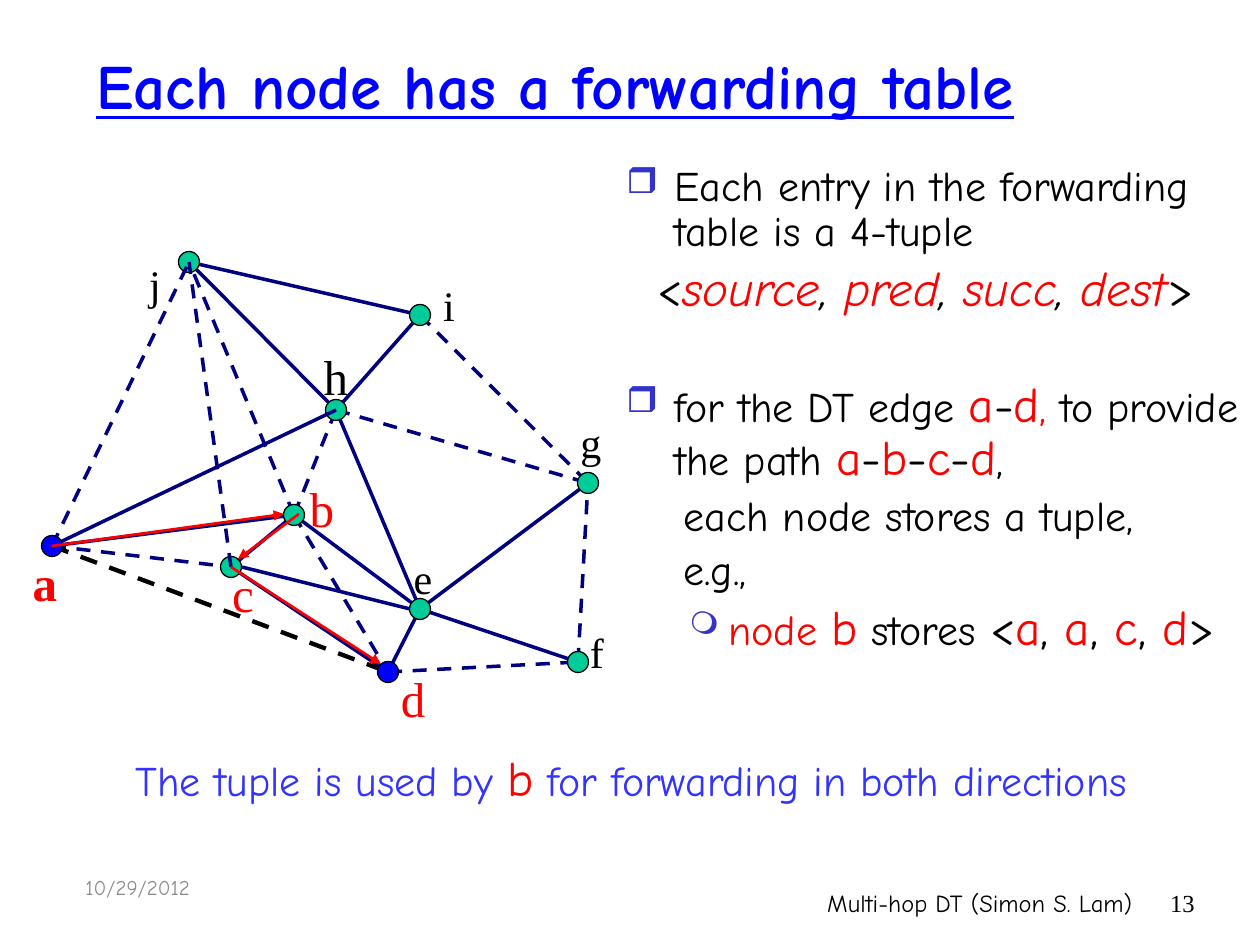
from lxml import etree
from pptx import Presentation
from pptx.dml.color import RGBColor
from pptx.enum.dml import MSO_LINE
from pptx.enum.shapes import MSO_CONNECTOR, MSO_SHAPE
from pptx.enum.text import MSO_ANCHOR, PP_ALIGN
from pptx.oxml.ns import qn
from pptx.util import Emu, Pt

LEFT, CENTER, RIGHT = PP_ALIGN.LEFT, PP_ALIGN.CENTER, PP_ALIGN.RIGHT
TOP, MIDDLE = MSO_ANCHOR.TOP, MSO_ANCHOR.MIDDLE
DASH = MSO_LINE.DASH
STRAIGHT, OVAL = MSO_CONNECTOR.STRAIGHT, MSO_SHAPE.OVAL
PX_PER_INCH = 126
SANS, SERIF = "Comic Neue", "Times New Roman"
BLACK, RED, BLUE, NAVY, GREEN = "000000", "FF0000", "0000FF", "000080", "00CC99"
BULLET, CAPTION, GREY = "3333CC", "3333FF", "8C8C8C"

PLAIN = dict(size=Pt(24), name=SANS, color=BLACK)
LARGE = PLAIN | dict(size=Pt(28))
LARGE_RED = LARGE | dict(color=RED)

NODES = {
    "j": (189, 262), "i": (420, 315), "h": (336, 410), "g": (588, 483),
    "b": (294, 515), "a": (52, 546), "c": (231, 567), "e": (420, 609),
    "d": (388, 672), "f": (578, 662),
}
NODE_SIZE = 21
SOLID_EDGES = "hj ab cd cb be ed he ef eg hi ji".split()
DASHED_EDGES = "bj bh ac bd df fg hg ig".split()
# Label centre x, box top, size, colour
LABELS = {
    "h": (336, 340, 28, BLACK), "c": (243, 557, 28, RED), "a": (45, 546, 28, RED),
    "i": (449, 273, 24, BLACK), "b": (322, 472, 28, RED), "j": (155, 252, 24, BLACK),
    "d": (413, 662, 28, RED), "e": (423, 546, 24, BLACK), "f": (597, 620, 24, BLACK),
    "g": (591, 410, 24, BLACK),
}


def px(length):
    return Emu(round(length * 914400 / PX_PER_INCH))


def rgb(value):
    return RGBColor.from_string(value)


def joined(words, separator, word_format, separator_format):
    """Runs for the words with a separator run between neighbours."""
    runs = []
    for word in words:
        runs += [(separator, separator_format), (word, word_format)]
    return runs[1:]


class SlideBuilder:
    """Holds the current slide and draws each kind of element on it."""

    def __init__(self, slide):
        self.slide = slide

    def text_frame(self, left, top, width, height, anchor=TOP, wrap=True):
        box = self.slide.shapes.add_textbox(px(left), px(top), px(width), px(height))
        box.text_frame.word_wrap = wrap
        box.text_frame.vertical_anchor = anchor
        return box.text_frame

    def fill_paragraph(self, paragraph, runs, align=LEFT):
        paragraph.alignment = align
        for text, style in runs:
            run = paragraph.add_run()
            run.text = text
            for key, value in style.items():
                if key == "color":
                    run.font.color.rgb = rgb(value)
                else:
                    setattr(run.font, key, value)

    def text(self, box, runs, align=LEFT, anchor=TOP, wrap=True):
        frame = self.text_frame(*box, anchor=anchor, wrap=wrap)
        self.fill_paragraph(frame.paragraphs[0], runs, align)

    def bullet_list(self, box, items):
        """Each item: runs, left margin, first-line indent, space before, bullet."""
        frame = self.text_frame(*box)
        for index, (runs, margin, indent, space, bullet) in enumerate(items):
            paragraph = frame.add_paragraph() if index else frame.paragraphs[0]
            self.fill_paragraph(paragraph, runs)
            paragraph.line_spacing = 0.9
            paragraph.space_before = Pt(space)
            properties = paragraph._p.get_or_add_pPr()
            properties.set("marL", str(px(margin)))
            properties.set("indent", str(px(indent)))
            if bullet:
                character, percent, level = bullet
                paragraph.level = level
                color = etree.SubElement(properties, qn("a:buClr"))
                etree.SubElement(color, qn("a:srgbClr"), val=BULLET)
                etree.SubElement(properties, qn("a:buSzPct"), val=str(percent * 1000))
                etree.SubElement(properties, qn("a:buChar"), char=character)

    def line(self, start, end, color=NAVY, width=2, dash=None, arrow=False):
        connector = self.slide.shapes.add_connector(
            STRAIGHT, *(px(value) for value in (*start, *end)))
        connector.line.color.rgb = rgb(color)
        connector.line.width = Pt(width)
        if dash:
            connector.line.dash_style = dash
        properties = connector.element.spPr
        if arrow:
            etree.SubElement(properties.find(qn("a:ln")), qn("a:tailEnd"), type="triangle")
        etree.SubElement(properties, qn("a:effectLst"))

    def edge(self, ends, **style):
        self.line(NODES[ends[0]], NODES[ends[1]], **style)

    def node(self, letter, color):
        x, y = NODES[letter]
        shape = self.slide.shapes.add_shape(
            OVAL, px(x - NODE_SIZE / 2), px(y - NODE_SIZE / 2), px(NODE_SIZE), px(NODE_SIZE))
        shape.shadow.inherit = False
        shape.fill.solid()
        shape.fill.fore_color.rgb = rgb(color)
        shape.line.color.rgb = rgb(BLACK)
        shape.line.width = Pt(0.75)


def draw_graph(builder):
    for letter, (center, top, size, color) in LABELS.items():
        style = dict(size=Pt(size), name=SERIF, color=color, bold=letter == "a")
        builder.text((center - 25, top, 50, 72 if size == 28 else 63),
                     [(letter, style)], CENTER, wrap=False)
    for ends in SOLID_EDGES:
        builder.edge(ends)
    for ends in DASHED_EDGES:
        builder.edge(ends, dash=DASH)
    for letter in "feghijbc":
        builder.node(letter, GREEN)
    builder.edge("ad", color=BLACK, width=2.5, dash=DASH)
    builder.line((242, 567), (410, 609))
    builder.edge("ah")
    builder.edge("aj", dash=DASH)
    for letter in "da":
        builder.node(letter, BLUE)
    builder.edge("cj", dash=DASH)
    for start, end in ((NODES["a"], (284, 514)), ((299, 514), (238, 559)),
                       (NODES["c"], (381, 664))):
        builder.line(start, end, color=RED, width=1.5, arrow=True)


def draw_explanation(builder):
    tuple_names = joined(["source", "pred", "succ", "dest"], ", ",
                         LARGE_RED | dict(italic=True), LARGE | dict(italic=True))
    edge_runs = [("for the DT edge ", PLAIN), *joined("ad", "-", LARGE_RED, LARGE),
                 (", ", PLAIN | dict(color=RED)), ("to provide the path ", PLAIN),
                 *joined("abcd", "-", LARGE_RED, LARGE), (",", PLAIN)]
    stored_runs = [("node ", PLAIN | dict(color=RED)), ("b", LARGE_RED), (" stores ", PLAIN),
                   ("<", LARGE), *joined("aacd", ", ", LARGE_RED, LARGE), (">", LARGE)]
    square, circle = ("❒", 85, 0), ("❍", 75, 1)
    builder.bullet_list((614, 159, 646, 567), [
        ([("Each entry in the forwarding table is a 4-tuple", PLAIN)], 48, -48, 5, square),
        ([("<", LARGE), *tuple_names, (">", LARGE)], 31, 0, 5, None),
        (edge_runs, 48, -48, 36, square),
        ([("each node stores a tuple,", PLAIN)], 57, 0, 5, None),
        ([("e.g.,", PLAIN)], 57, 0, 5, None),
        (stored_runs, 102, -39, 5, circle),
    ])


def main():
    presentation = Presentation()
    presentation.slide_width, presentation.slide_height = px(1260), px(945)
    builder = SlideBuilder(presentation.slides.add_slide(presentation.slide_layouts[6]))
    title_style = dict(size=Pt(36), name=SANS, color=BLUE, bold=True, underline=True)
    builder.text((84, 42, 1134, 84), [("Each node has a forwarding table", title_style)],
                 anchor=MIDDLE)
    draw_explanation(builder)
    draw_graph(builder)
    caption = PLAIN | dict(color=CAPTION)
    builder.text((42, 741, 1178, 72),
                 [("The tuple is used by ", caption), ("b", LARGE_RED),
                  (" for forwarding in both directions", caption)], CENTER)
    footer = PLAIN | dict(size=Pt(14))
    builder.text((329, 882, 816, 63), [("Multi-hop DT (Simon S. Lam)", footer)], RIGHT)
    builder.text((73, 861, 147, 53),
                 [("10/29/2012", footer | dict(size=Pt(12), color=GREY))], anchor=MIDDLE)
    builder.text((1144, 882, 63, 63), [("13", footer | dict(name=SERIF))], RIGHT)
    presentation.save("out.pptx")


if __name__ == "__main__":
    main()
